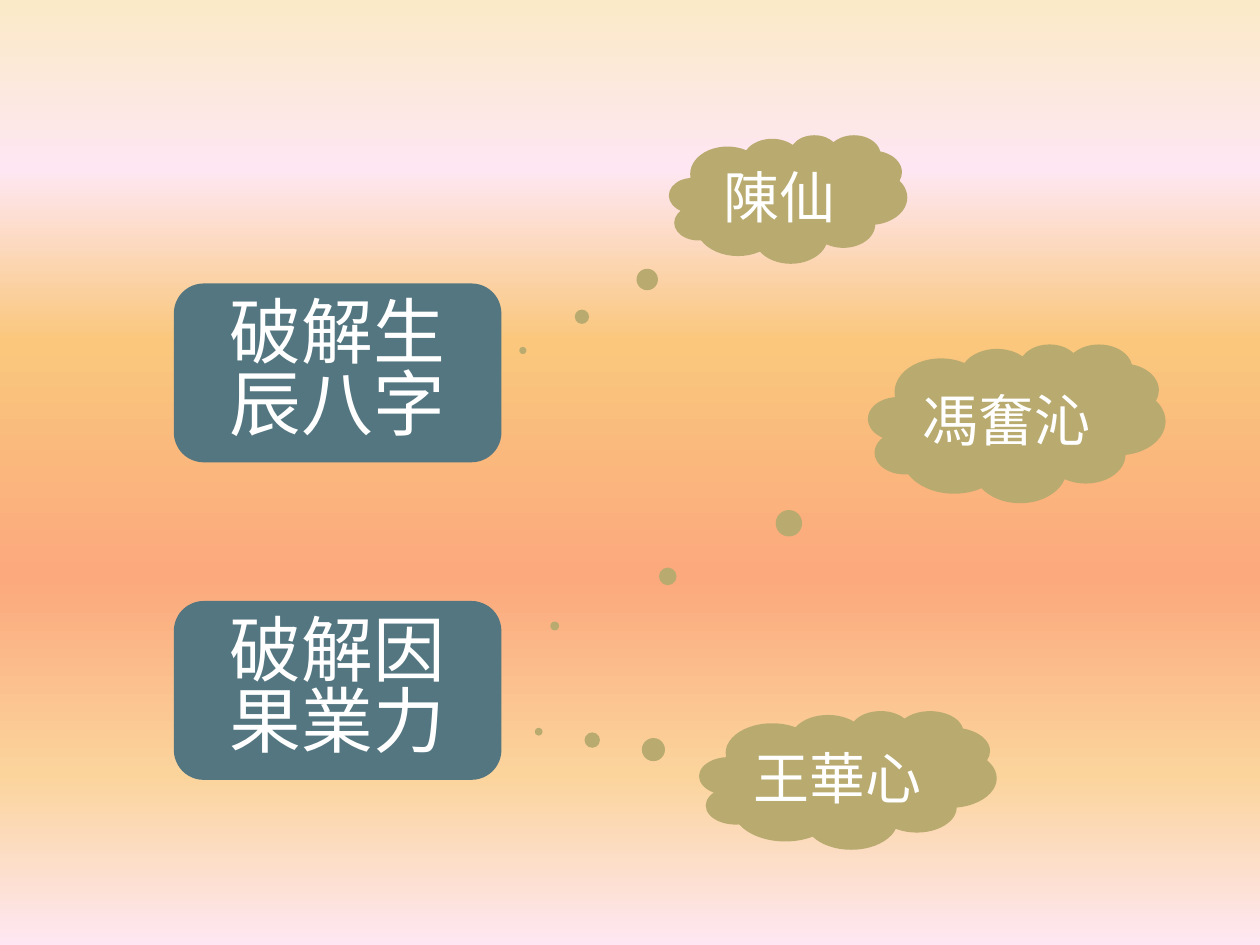
from lxml.etree import SubElement
from pptx import Presentation
from pptx.dml.color import RGBColor
from pptx.enum.shapes import MSO_SHAPE as Shape
from pptx.enum.text import MSO_ANCHOR as Anchor, PP_ALIGN as Align
from pptx.oxml.ns import qn
from pptx.util import Inches, Pt

SLIDE_WIDTH, SLIDE_HEIGHT = Inches(10), Inches(7.5)
CJK_FONT = "Noto Sans CJK JP"
TEAL, OLIVE, WHITE = "537680", "B9AB6F", "FFFFFF"
SUNSET = [(0, "FBEAC7"), (18, "FEE7F2"), (36, "FAC77D"),
          (61, "FBA97D"), (82, "FBD49C"), (100, "FEE7F2")]

# Boxes are left, top, width, height in percent of the slide's size.
TOPICS = [("破解生辰八字", (13.8, 30, 26, 18.93)),
          ("破解因果業力", (13.8, 63.6, 26, 18.93))]
# Each thought ends with the offset of its tail from the cloud's centre.
THOUGHTS = [("陳仙", (53.1, 14.27, 18.9, 13.6), (-1.114, 1.178)),
            ("馮奮沁", (68.9, 36.4, 23.6, 16.8), (-1.554, 1.277)),
            ("王華心", (55.5, 75.2, 23.6, 14.67), (-1.04, -0.348))]


def color(hex_string):
    return RGBColor.from_string(hex_string)


def paint_background(slide, stops):
    """Fill the background with a gradient running from top to bottom."""
    fill = slide.background.fill
    fill.gradient()
    fill.gradient_angle = 270
    stop_list = next(slide.element.iter(qn("a:gsLst")))
    for old_stop in list(stop_list):
        stop_list.remove(old_stop)
    for percent, hex_string in stops:
        stop = SubElement(stop_list, qn("a:gs"), pos=str(percent * 1000))
        SubElement(stop, qn("a:srgbClr"), val=hex_string)


def add_block(slide, kind, box, fill):
    left, top, width, height = box
    shape = slide.shapes.add_shape(
        kind,
        int(SLIDE_WIDTH * left / 100), int(SLIDE_HEIGHT * top / 100),
        int(SLIDE_WIDTH * width / 100), int(SLIDE_HEIGHT * height / 100))
    shape.shadow.inherit = False
    shape.fill.solid()
    shape.fill.fore_color.rgb = color(fill)
    shape.line.fill.background()
    return shape


def write(shape, text, size, font=CJK_FONT, line_spacing=1.0):
    frame = shape.text_frame
    frame.word_wrap = True
    frame.vertical_anchor = Anchor.MIDDLE
    paragraph = frame.paragraphs[0]
    paragraph.alignment = Align.CENTER
    paragraph.line_spacing = line_spacing
    run = paragraph.add_run()
    run.text = text
    run.font.size = Pt(size)
    run.font.name = font
    run.font.color.rgb = color(WHITE)
    SubElement(run.font._element, qn("a:ea"), typeface=CJK_FONT)


def add_topic(slide, text, box):
    shape = add_block(slide, Shape.ROUNDED_RECTANGLE, box, TEAL)
    write(shape, text, size=41, line_spacing=0.83)


def add_thought(slide, text, box, tail):
    shape = add_block(slide, Shape.CLOUD_CALLOUT, box, OLIVE)
    shape.adjustments[0], shape.adjustments[1] = tail
    shape.text_frame.margin_left = shape.text_frame.margin_right = 0
    write(shape, text, size=32, font="Calibri")


def main():
    presentation = Presentation()
    presentation.slide_width, presentation.slide_height = SLIDE_WIDTH, SLIDE_HEIGHT
    slide = presentation.slides.add_slide(presentation.slide_layouts[6])
    paint_background(slide, SUNSET)
    for topic in TOPICS:
        add_topic(slide, *topic)
    for thought in THOUGHTS:
        add_thought(slide, *thought)
    presentation.save("out.pptx")


if __name__ == "__main__":
    main()
